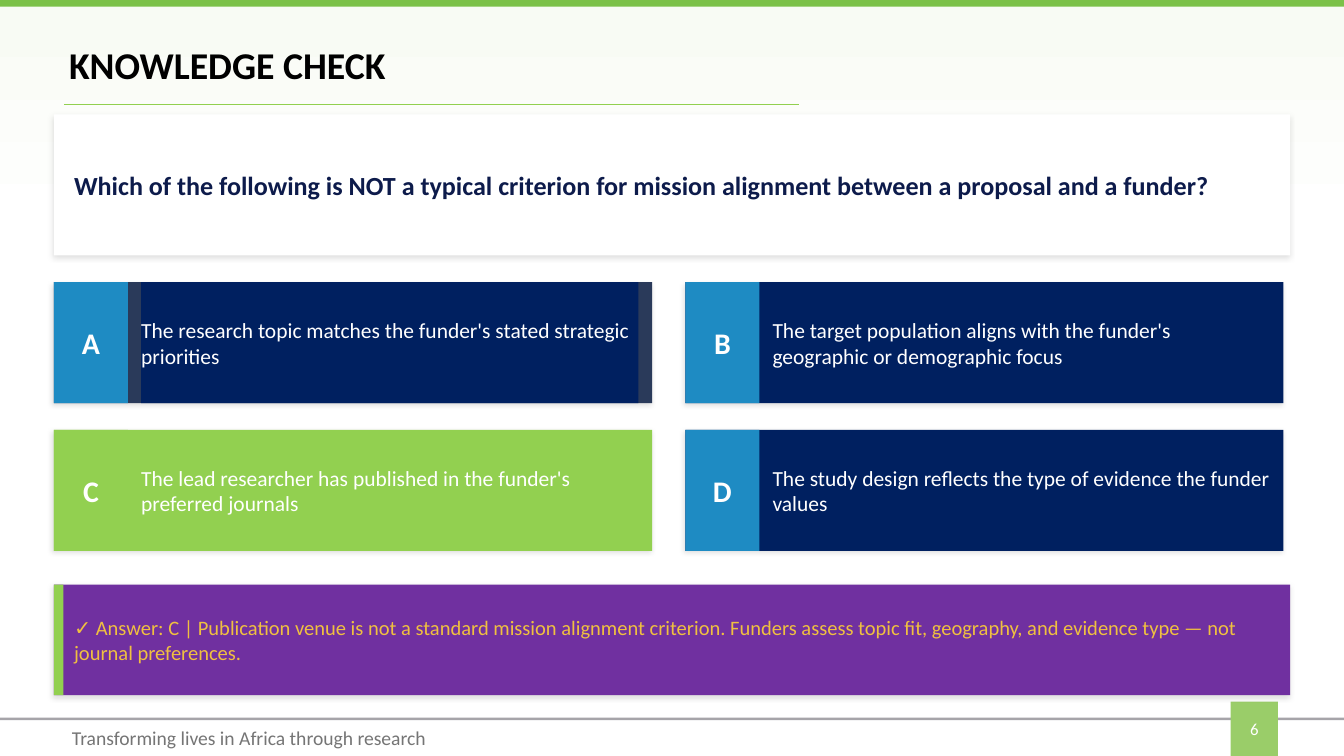
from lxml.etree import SubElement
from pptx import Presentation
from pptx.dml.color import RGBColor
from pptx.enum.shapes import MSO_CONNECTOR, MSO_SHAPE
from pptx.enum.text import MSO_ANCHOR, MSO_AUTO_SIZE, PP_ALIGN
from pptx.oxml.ns import qn
from pptx.util import Inches, Pt

COLORS = {
    "white": "FFFFFF", "black": "000000", "tint": "F8FBF4", "rule": "A6A4A9",
    "bar": "7BC148", "green": "92D050", "badge": "9ACD69", "footer": "757575",
    "ink": "0D1B4B", "navy": "002060", "slate": "2A3A5A", "blue": "1E8BC3",
    "purple": "7030A0", "gold": "F0C040",
}
LEFT, CARD_WIDTH = 1.07, 24.53
OPTION_TOP, OPTION_WIDTH, OPTION_HEIGHT = 5.6, 11.87, 2.4
COLUMN_STEP, ROW_STEP, LETTER_WIDTH = 12.53, 2.93, 1.47
TEXT_OFFSET, TEXT_WIDTH = 1.73, 9.87
OPTIONS = [
    ("A", "The research topic matches the funder's stated strategic priorities", "slate", "blue", "navy"),
    ("B", "The target population aligns with the funder's geographic or demographic focus", "navy", "blue", None),
    ("C", "The lead researcher has published in the funder's preferred journals", "green", "green", None),
    ("D", "The study design reflects the type of evidence the funder values", "navy", "blue", None),
]


def color(name):
    """Return the named colour."""
    return RGBColor.from_string(COLORS[name])


def write(shape, text, size=30.7, fill="white", bold=False, align=PP_ALIGN.LEFT, inset=(0, 0), spacing=None):
    """Put one formatted, vertically centred paragraph in a shape."""
    frame = shape.text_frame
    frame.word_wrap = True
    frame.auto_size = MSO_AUTO_SIZE.NONE
    frame.vertical_anchor = MSO_ANCHOR.MIDDLE
    frame.margin_left = frame.margin_right = Inches(inset[0])
    frame.margin_top = frame.margin_bottom = Inches(inset[1])
    para = frame.paragraphs[0]
    para.alignment = align
    para.line_spacing = spacing
    span = para.add_run()
    span.text = text
    span.font.name = "Calibri"
    span.font.size = Pt(size)
    span.font.bold = bold
    span.font.color.rgb = color(fill)


class Page:
    """Draw the elements of one slide in a shared style."""

    inset = (0.1, 0.05)

    def __init__(self, deck):
        """Add a title-only slide."""
        self.slide = deck.slides.add_slide(deck.slide_layouts[5])

    def title(self, text, *place):
        """Fill and place the title, in front of what is drawn so far."""
        box = self.slide.shapes.title
        box.left, box.top, box.width, box.height = map(Inches, place)
        write(box, text, size=54, fill="black", bold=True, inset=self.inset, spacing=0.9)
        box._element.getparent().append(box._element)

    def rect(self, fill, *place, shadow=False):
        """Add a borderless rectangle."""
        box = self.slide.shapes.add_shape(MSO_SHAPE.RECTANGLE, *map(Inches, place))
        box.fill.solid()
        box.fill.fore_color.rgb = color(fill)
        box.line.fill.background()
        box.shadow.inherit = False
        if shadow:
            effects = box._element.spPr.find(qn("a:effectLst"))
            outer = SubElement(effects, qn("a:outerShdw"), blurRad=str(Pt(8)), dist=str(Pt(3)),
                               dir="8100000", algn="bl", rotWithShape="0")
            tone = SubElement(outer, qn("a:srgbClr"), val=COLORS["black"])
            SubElement(tone, qn("a:alpha"), val="12000")
        return box

    def backdrop(self, *place):
        """Add the wash that fades from tint to white."""
        fill = self.rect("white", *place).fill
        fill.gradient()
        fill.gradient_angle = 270
        for stop, name, position in zip(fill.gradient_stops, ("tint", "white"), (0.02, 0.3)):
            stop.color.rgb = color(name)
            stop.position = position

    def line(self, fill, *ends):
        """Add a one-point straight line."""
        rule = self.slide.shapes.add_connector(MSO_CONNECTOR.STRAIGHT, *map(Inches, ends))
        rule.line.color.rgb = color(fill)
        rule.line.width = Pt(1)
        SubElement(rule._element.spPr, qn("a:effectLst"))

    def text(self, words, *place, **style):
        """Add a text box."""
        write(self.slide.shapes.add_textbox(*map(Inches, place)), words, **style)

    def option(self, left, top, letter, words, card, tab, panel):
        """Add an answer card with its letter tab."""
        letter_place = (left, top, LETTER_WIDTH, OPTION_HEIGHT)
        text_place = (left + TEXT_OFFSET, top, TEXT_WIDTH, OPTION_HEIGHT)
        self.rect(card, left, top, OPTION_WIDTH, OPTION_HEIGHT, shadow=True)
        self.rect(tab, *letter_place)
        self.text(letter, *letter_place, size=42.7, bold=True, align=PP_ALIGN.CENTER)
        if panel:
            write(self.rect(panel, *text_place), words)
        else:
            self.text(words, *text_place)


def main():
    """Build and save the knowledge check slide."""
    deck = Presentation()
    deck.slide_width, deck.slide_height = Inches(26.67), Inches(15)
    page = Page(deck)

    page.backdrop(0, 0, 26.67, 15)
    page.rect("rule", 0, 14.24, 26.67, 0.05)
    page.rect("bar", 0, 0, 26.67, 0.13)
    page.line("green", 1.27, 2.07, 15.85, 2.07)
    page.text("Transforming lives in Africa through research", 1.33, 14.24, 9, 0.8,
              size=28, fill="footer", inset=page.inset)
    write(page.rect("badge", 24.42, 13.92, 0.94, 1.08), "6",
          size=24, align=PP_ALIGN.CENTER, inset=page.inset)
    page.title("KNOWLEDGE CHECK", 1.27, 0.83, 24.22, 1.02)

    page.rect("white", LEFT, 2.27, CARD_WIDTH, 2.8, shadow=True)
    page.text("Which of the following is NOT a typical criterion for mission alignment "
              "between a proposal and a funder?", 1.47, 2.27, 23.73, 2.8,
              size=37.3, fill="ink", bold=True)

    for index, option in enumerate(OPTIONS):
        row, column = divmod(index, 2)
        page.option(LEFT + column * COLUMN_STEP, OPTION_TOP + row * ROW_STEP, *option)

    page.rect("purple", LEFT, 11.6, CARD_WIDTH, 2.19, shadow=True)
    page.rect("green", LEFT, 11.6, 0.19, 2.19)
    page.text("✓ Answer: C | Publication venue is not a standard mission alignment criterion. "
              "Funders assess topic fit, geography, and evidence type — not journal preferences.",
              1.47, 11.6, 23.73, 2.19, size=29.3, fill="gold")
    deck.save("out.pptx")


if __name__ == "__main__":
    main()
